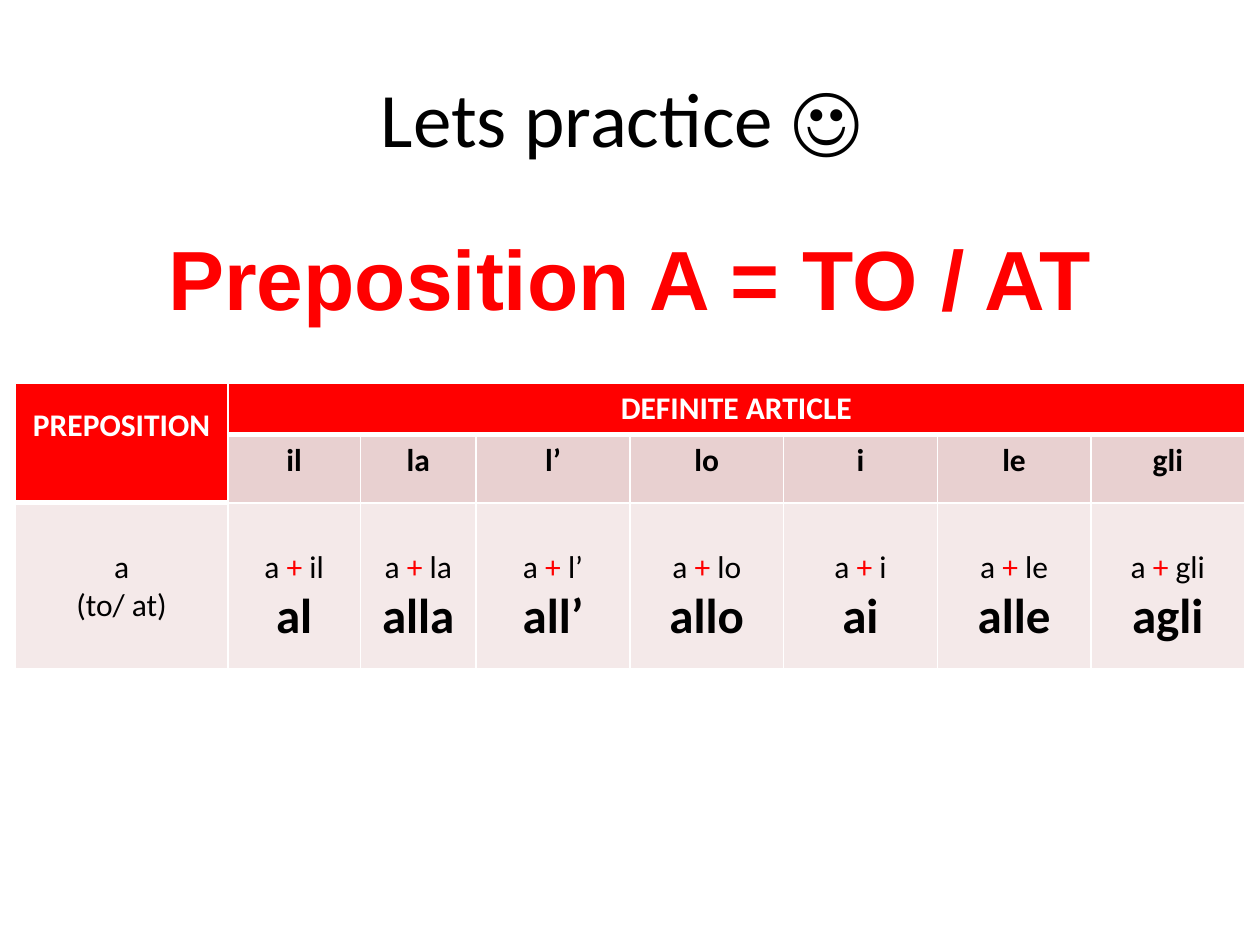
from lxml import etree
from pptx import Presentation
from pptx.dml.color import RGBColor
from pptx.enum.text import MSO_ANCHOR, PP_ALIGN
from pptx.oxml.ns import qn
from pptx.util import Inches, Pt

CENTER = PP_ALIGN.CENTER
MIDDLE = MSO_ANCHOR.MIDDLE
TOP = MSO_ANCHOR.TOP

COLORS = {
    "red": "FF0000",
    "black": "000000",
    "white": "FFFFFF",
    "article": "E8D0D0",
    "body": "F4E9E9",
}
COL_WIDTHS = [1.69, 1.05, 0.92] + [1.22] * 5
ROW_HEIGHTS = [0.41, 0.53, 1.32]
FORMS = [("il", "al"), ("la", "alla"), ("l’", "all’"), ("lo", "allo"),
         ("i", "ai"), ("le", "alle"), ("gli", "agli")]


def rgb(name):
    return RGBColor.from_string(COLORS[name])


def add_run(p, text, size=18, color="black", bold=False, font="Calibri"):
    r = p.add_run()
    r.text = text
    r.font.size = Pt(size)
    r.font.bold = bold
    r.font.name = font
    r.font.color.rgb = rgb(color)


def add_text(slide, box, anchor, text, space_before=0, **style):
    tf = slide.shapes.add_textbox(*(Inches(v) for v in box)).text_frame
    tf.word_wrap = True
    tf.vertical_anchor = anchor
    p = tf.paragraphs[0]
    p.alignment = CENTER
    p.space_before = Pt(space_before)
    add_run(p, text, **style)


def set_borders(cell, top=1, bottom=1):
    """Draw white cell borders; widths are in points."""
    tc_pr = cell._tc.get_or_add_tcPr()
    for tag, width in (("lnL", 1), ("lnR", 1), ("lnT", top), ("lnB", bottom)):
        ln = etree.SubElement(tc_pr, qn(f"a:{tag}"), w=str(Pt(width)))
        fill = etree.SubElement(ln, qn("a:solidFill"))
        etree.SubElement(fill, qn("a:srgbClr"), val=COLORS["white"])


def fill_cell(cell, color, lines, margin_top=0.05):
    """Fill a cell; each line is a list of (text, run style) pairs."""
    cell.fill.solid()
    cell.fill.fore_color.rgb = rgb(color)
    cell.margin_top = Inches(margin_top)
    tf = cell.text_frame
    for i, runs in enumerate(lines):
        p = tf.add_paragraph() if i else tf.paragraphs[0]
        p.alignment = CENTER
        for text, style in runs:
            add_run(p, text, **style)


def add_article_table(slide):
    frame = slide.shapes.add_table(
        len(ROW_HEIGHTS), len(COL_WIDTHS), Inches(0.12), Inches(3.04),
        Inches(sum(COL_WIDTHS)), Inches(sum(ROW_HEIGHTS)))
    table = frame.table
    for col, width in zip(table.columns, COL_WIDTHS):
        col.width = Inches(width)
    for row, height in zip(table.rows, ROW_HEIGHTS):
        row.height = Inches(height)

    for r in range(len(ROW_HEIGHTS)):
        for c in range(len(COL_WIDTHS)):
            header_end = 0 if c else 1
            set_borders(table.cell(r, c),
                        top=3 if r == header_end + 1 else 1,
                        bottom=3 if r == header_end or r == c == 0 else 1)
    table.cell(0, 0).merge(table.cell(1, 0))
    table.cell(0, 1).merge(table.cell(0, len(FORMS)))

    header = {"color": "white", "bold": True}
    fill_cell(table.cell(0, 0), "red", [[("PREPOSITION", header)]], 0.19)
    fill_cell(table.cell(0, 1), "red", [[("DEFINITE ARTICLE", header)]])
    fill_cell(table.cell(2, 0), "body", [[("a", {})], [("(to/ at)", {})]], 0.36)
    for c, (article, combined) in enumerate(FORMS, start=1):
        fill_cell(table.cell(1, c), "article", [[(article, {"bold": True})]])
        fill_cell(table.cell(2, c), "body", [
            [("a ", {}), ("+ ", {"color": "red"}), (article, {})],
            [(combined, {"size": 28, "bold": True})],
        ], 0.36)


def main():
    prs = Presentation()
    prs.slide_width = Inches(10)
    prs.slide_height = Inches(7.5)
    slide = prs.slides.add_slide(prs.slide_layouts[6])
    add_text(slide, (0.5, 0.3, 9, 1.25), MIDDLE, "Lets practice ☺ ", size=44)
    add_text(slide, (0.5, 1.75, 9, 4.95), TOP, "Preposition A = TO / AT",
             space_before=5, size=48, color="red", bold=True, font="Arial")
    add_article_table(slide)
    prs.save("out.pptx")


if __name__ == "__main__":
    main()
